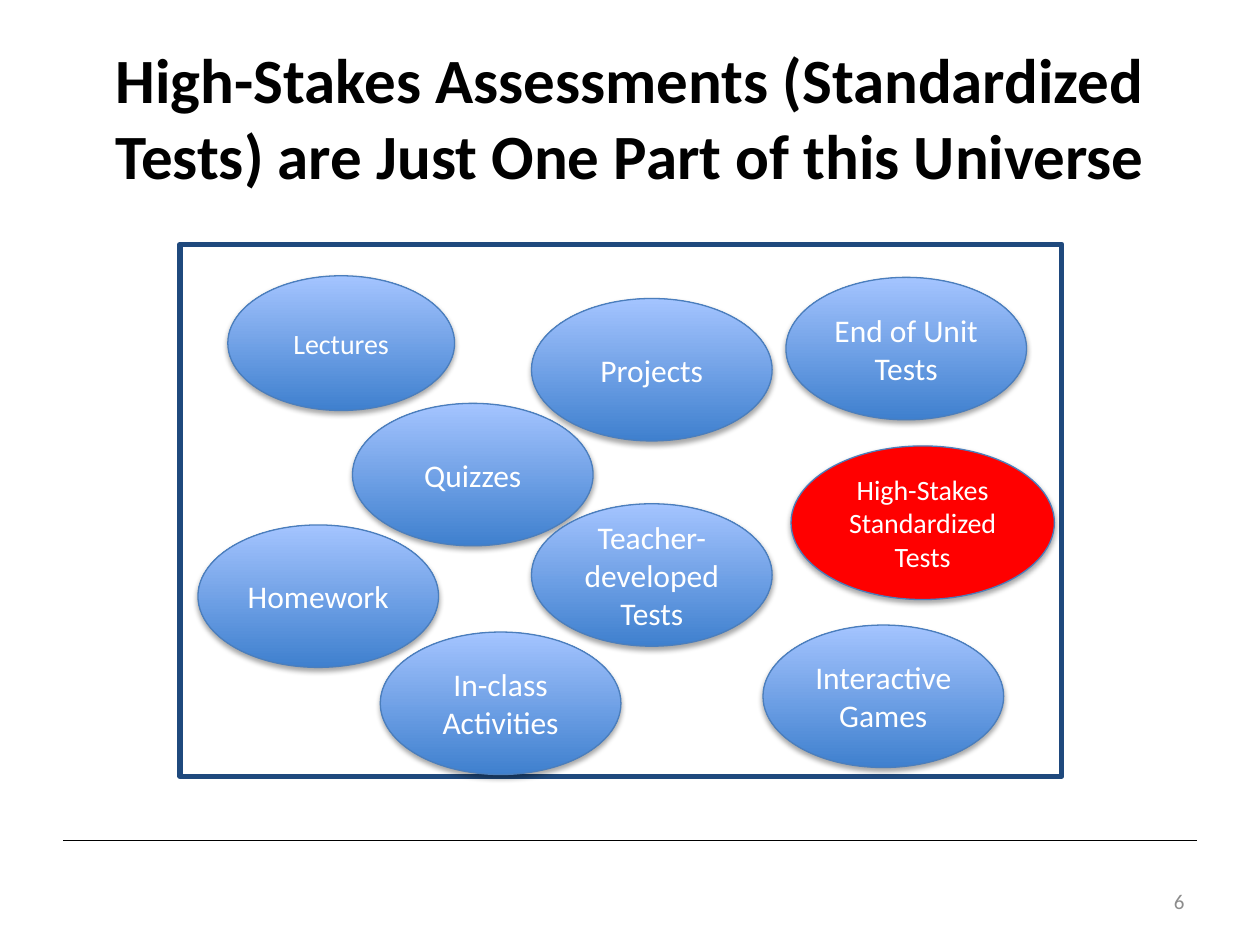
from dataclasses import dataclass

from lxml import etree
from pptx import Presentation
from pptx.dml.color import RGBColor
from pptx.enum import shapes, text
from pptx.oxml import ns
from pptx.util import Pt


@dataclass(frozen=True)
class Theme:
    font: str = "Calibri"
    ink: str = "000000"
    paper: str = "FFFFFF"
    muted: str = "8C8C8C"
    frame: str = "1F497D"
    edge: str = "4B7EBC"
    deep: str = "3F80CE"
    light: str = "A4C4FF"
    alert: str = "FF0000"
    title: int = 36
    large: int = 18
    small: int = 16
    note: int = 12


THEME = Theme()
NORMAL = (137.5, 81.4)
BUBBLES = [
    ("Lectures", 27.4, 18, (129.6, 77), THEME.small, False),
    ("Projects", 200.9, 31, NORMAL, THEME.large, False),
    ("Quizzes", 98.6, 90.9, NORMAL, THEME.large, False),
    ("Teacher-developed Tests", 200.9, 148.3, NORMAL, THEME.large, False),
    ("End of Unit Tests", 346.3, 18.9, NORMAL, THEME.large, False),
    ("High-Stakes Standardized Tests", 349.2, 115.2, (150.5, 87.8), THEME.small, True),
    ("In-class Activities", 114.5, 221.6, NORMAL, THEME.large, False),
    ("Interactive Games", 333.2, 217.6, NORMAL, THEME.large, False),
    ("Homework", 10.3, 160.4, NORMAL, THEME.large, False),
]


def rgb(value):
    return RGBColor.from_string(value)


def write(shape, words, size, color, align, bold=False):
    frame = shape.text_frame
    frame.word_wrap = True
    frame.vertical_anchor = text.MSO_ANCHOR.MIDDLE
    para = frame.paragraphs[0]
    para.text = words
    para.alignment = align
    para.font.name = THEME.font
    para.font.size = Pt(size)
    para.font.bold = bold
    para.font.color.rgb = rgb(color)


def add_label(slide, box, words, size, color, align, bold=False):
    label = slide.shapes.add_textbox(*map(Pt, box))
    write(label, words, size, color, align, bold)


def add_rule(slide, left, top, width):
    rule = slide.shapes.add_connector(
        shapes.MSO_CONNECTOR.STRAIGHT, Pt(left), Pt(top), Pt(left + width), Pt(top))
    rule.line.color.rgb = rgb(THEME.ink)
    rule.line.width = Pt(0.5)
    etree.SubElement(rule._element.spPr, ns.qn("a:effectLst"))


def add_shadow(shape):
    shape.shadow.inherit = False
    effects = shape._element.spPr.find(ns.qn("a:effectLst"))
    outer = etree.SubElement(
        effects, ns.qn("a:outerShdw"), blurRad=str(Pt(3.1)),
        dist=str(Pt(1.8)), dir="5400000", rotWithShape="0")
    color = etree.SubElement(outer, ns.qn("a:srgbClr"), val=THEME.ink)
    etree.SubElement(color, ns.qn("a:alpha"), val="35000")


def add_bubble(slide, box, words, size, alert):
    bubble = slide.shapes.add_shape(shapes.MSO_SHAPE.OVAL, *map(Pt, box))
    if alert:
        bubble.fill.solid()
        bubble.fill.fore_color.rgb = rgb(THEME.alert)
    else:
        bubble.fill.gradient()
        bubble.fill.gradient_angle = 90
        for stop, color in zip(bubble.fill.gradient_stops, (THEME.deep, THEME.light)):
            stop.color.rgb = rgb(color)
    bubble.line.color.rgb = rgb(THEME.edge)
    bubble.line.width = Pt(0.75)
    add_shadow(bubble)
    write(bubble, words, size, THEME.paper, text.PP_ALIGN.CENTER)


def add_universe(slide, left, top, width, height):
    frame = slide.shapes.add_shape(
        shapes.MSO_SHAPE.RECTANGLE, Pt(left), Pt(top), Pt(width), Pt(height))
    frame.shadow.inherit = False
    frame.fill.background()
    frame.line.color.rgb = rgb(THEME.frame)
    frame.line.width = Pt(3)
    for words, x, y, extent, size, alert in BUBBLES:
        add_bubble(slide, (left + x, top + y, *extent), words, size, alert)


def main():
    deck = Presentation()
    deck.slide_width, deck.slide_height = Pt(720), Pt(540)
    slide = deck.slides.add_slide(deck.slide_layouts[6])
    add_rule(slide, 36, 480, 648)
    add_label(slide, (36, 21.6, 648, 90),
              "High-Stakes Assessments (Standardized Tests) are Just One Part of this Universe",
              THEME.title, THEME.ink, text.PP_ALIGN.CENTER, bold=True)
    add_label(slide, (516, 500.5, 168, 28.8), "6",
              THEME.note, THEME.muted, text.PP_ALIGN.RIGHT)
    add_universe(slide, 102.8, 139.6, 504, 304)
    deck.save("out.pptx")


if __name__ == "__main__":
    main()
